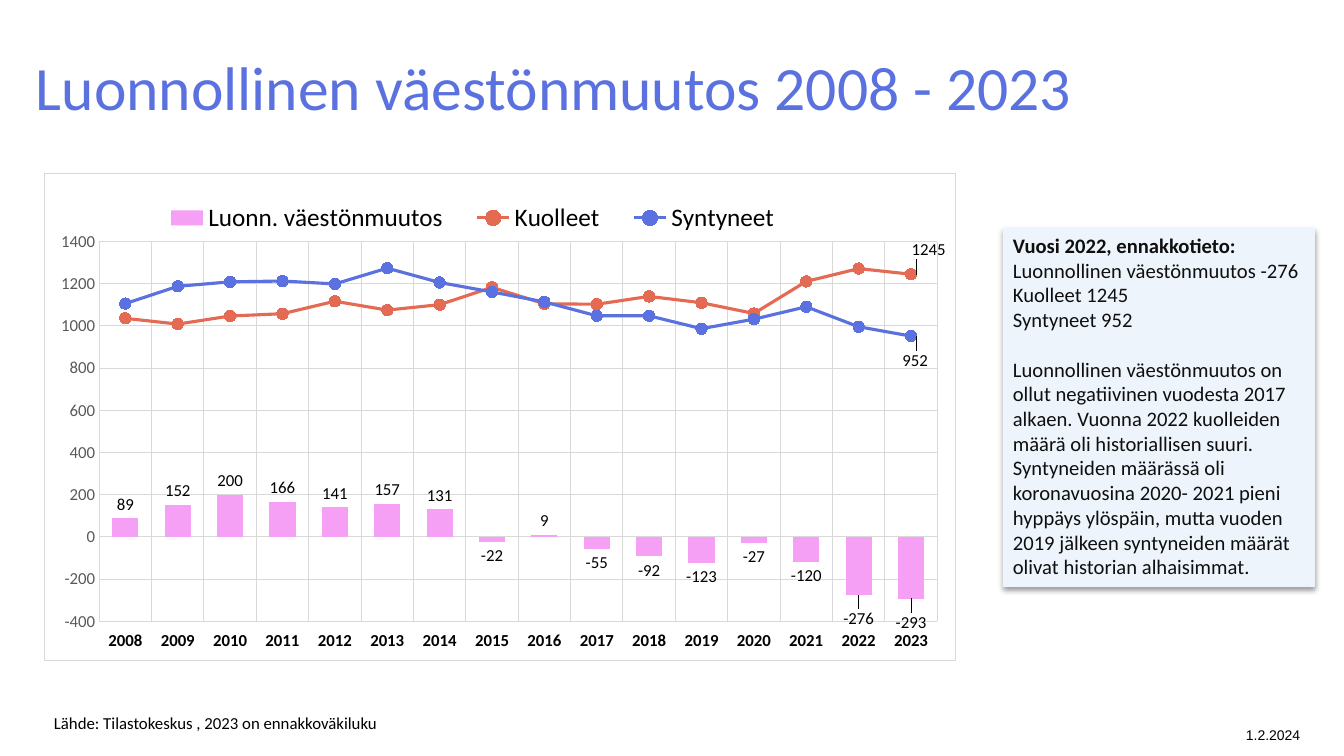
from lxml import etree
from pptx import Presentation
from pptx import util as u
from pptx.chart.data import CategoryChartData
from pptx.dml.color import RGBColor
from pptx.enum import chart as ch, shapes, text
from pptx.oxml import parse_xml
from pptx.oxml.ns import nsdecls, qn

PX = 914400 / 100.8
BLUE, CORAL, PINK, GRID, BLACK = "5A71DF", "E56A54", "F59FF5", "D9D9D9", "000000"

YEARS = [str(year) for year in range(2008, 2024)]
CHANGE = [89, 152, 200, 166, 141, 157, 131, -22, 9, -55, -92, -123, -27, -120, -276, -293]
DEATHS = [1036, 1009, 1047, 1058, 1117, 1075, 1101, 1183,
          1105, 1103, 1140, 1110, 1059, 1211, 1272, 1245]
BIRTHS = [1106, 1188, 1209, 1213, 1199, 1274, 1206, 1161,
          1114, 1048, 1048, 987, 1032, 1091, 996, 952]


def px(length):
    return u.Emu(round(length * PX))


def color(value):
    return RGBColor.from_string(value)


def set_font(font, size, value=BLACK, name="Calibri", bold=False):
    font.size, font.name, font.bold = u.Pt(size), name, bold
    font.color.rgb = color(value)


def set_line(line, value, width=0.75):
    line.color.rgb = color(value)
    line.width = u.Pt(width)


def add_text(frame, content, space_before=0, spacing=None, **style):
    """Fill the first empty paragraph, or append one; newlines become line breaks."""
    paragraph = frame.paragraphs[0]
    if paragraph.runs:
        paragraph = frame.add_paragraph()
    paragraph.alignment = text.PP_ALIGN.LEFT
    if space_before:
        paragraph.space_before = u.Pt(space_before)
    if spacing:
        paragraph.line_spacing = spacing
    for index, line in enumerate(content.split("\n")):
        if index:
            paragraph.add_line_break()
        run = paragraph.add_run()
        run.text = line
        set_font(run.font, **style)


def manual_layout(x, y, w=None, h=None, inner=False, offset=False):
    """Chart layout in fractions of the chart; an offset moves a label from its usual place."""
    parts = []
    if inner:
        parts.append('<c:layoutTarget val="inner"/>')
    if not offset:
        parts.append('<c:xMode val="edge"/><c:yMode val="edge"/>')
    for tag, value in zip("xywh", (x, y, w, h)):
        if value is not None:
            parts.append(f'<c:{tag} val="{value}"/>')
    return parse_xml(f'<c:layout {nsdecls("c")}><c:manualLayout>{"".join(parts)}'
                     '</c:manualLayout></c:layout>')


def move_to_lines(chart, first):
    """Turn the column series from index first on into lines on the same axes."""
    columns = chart.plots[0]
    bars = columns.series[0]._element.getparent()
    lines = parse_xml(f'<c:lineChart {nsdecls("c")}><c:grouping val="standard"/>'
                      '<c:varyColors val="0"/><c:marker val="1"/></c:lineChart>')
    marker = lines.find(qn("c:marker"))
    for series in bars.findall(qn("c:ser"))[first:]:
        for flag in series.findall(qn("c:invertIfNegative")):
            series.remove(flag)
        marker.addprevious(series)
    for axis in bars.findall(qn("c:axId")):
        etree.SubElement(lines, qn("c:axId")).set("val", axis.get("val"))
    bars.addnext(lines)


def shift_label(series, index, x, y, position):
    label = series.points[index].data_label
    set_font(label.font, 12)
    label.position = position
    for element in series._element.findall(f'{qn("c:dLbls")}/{qn("c:dLbl")}'):
        if element.find(qn("c:idx")).get("val") == str(index):
            element.find(qn("c:idx")).addnext(manual_layout(x, y, offset=True))


class Page:
    def __init__(self, deck):
        self.slide = deck.slides.add_slide(deck.slide_layouts[6])

    def label(self, content, x, y, w, h, wrap=True, anchor=text.MSO_ANCHOR.TOP, **style):
        frame = self.slide.shapes.add_textbox(px(x), px(y), px(w), px(h)).text_frame
        frame.word_wrap = wrap
        frame.vertical_anchor = anchor
        add_text(frame, content, **style)

    def panel(self, x, y, w, h, fill):
        """Add a filled box with a soft shadow below it and return its text frame."""
        box = self.slide.shapes.add_shape(
            shapes.MSO_SHAPE.RECTANGLE, px(x), px(y), px(w), px(h))
        box.fill.solid()
        box.fill.fore_color.rgb = color(fill)
        box.line.fill.background()
        box.shadow.inherit = False
        box._element.spPr.find(qn("a:effectLst")).append(parse_xml(
            f'<a:outerShdw {nsdecls("a")} blurRad="50800" dist="25400" dir="5400000">'
            '<a:srgbClr val="000000"><a:alpha val="40000"/></a:srgbClr></a:outerShdw>'))
        box.text_frame.word_wrap = True
        box.text_frame.vertical_anchor = text.MSO_ANCHOR.TOP
        return box.text_frame

    def population_chart(self, x, y, w, h):
        data = CategoryChartData()
        data.categories = YEARS
        for name, values in (("Luonn. väestönmuutos", CHANGE),
                             ("Kuolleet", DEATHS), ("Syntyneet", BIRTHS)):
            data.add_series(name, values)
        chart = self.slide.shapes.add_chart(
            ch.XL_CHART_TYPE.COLUMN_CLUSTERED, px(x), px(y), px(w), px(h), data).chart
        chart.has_title = False
        set_font(chart.font, 18)
        self.axes(chart)
        self.frame(chart)
        move_to_lines(chart, 1)

        columns, lines = chart.plots
        columns.gap_width = 101
        columns.vary_by_categories = False
        change = columns.series[0]
        change.format.fill.solid()
        change.format.fill.fore_color.rgb = color(PINK)
        change.invert_if_negative = False
        outside = ch.XL_LABEL_POSITION.OUTSIDE_END
        change.data_labels.show_value = True
        change.data_labels.position = outside
        set_font(change.data_labels.font, 12)
        for index in (14, 15):
            shift_label(change, index, 0, 0.02, outside)

        for series, tone, dx, dy in zip(lines.series, (CORAL, BLUE),
                                        (-0.01, -0.02), (-0.05, 0.05)):
            series.smooth = False
            set_line(series.format.line, tone, 2.25)
            series.marker.style = ch.XL_MARKER_STYLE.CIRCLE
            series.marker.size = 8
            series.marker.format.fill.solid()
            series.marker.format.fill.fore_color.rgb = color(tone)
            set_line(series.marker.format.line, tone)
            series.data_labels.show_value = False
            shift_label(series, 15, dx, dy, ch.XL_LABEL_POSITION.RIGHT)

    def axes(self, chart):
        years, counts = chart.category_axis, chart.value_axis
        for axis in (years, counts):
            axis.major_tick_mark = axis.minor_tick_mark = ch.XL_TICK_MARK.NONE
            axis.has_major_gridlines = True
            set_line(axis.major_gridlines.format.line, GRID)
        years.tick_label_position = ch.XL_TICK_LABEL_POSITION.LOW
        set_font(years.tick_labels.font, 12, bold=True)
        set_line(years.format.line, GRID)
        counts.minimum_scale, counts.maximum_scale, counts.major_unit = -400, 1400, 200
        set_font(counts.tick_labels.font, 12, "595959")
        counts.format.line.fill.background()

    def frame(self, chart):
        """Place legend and plot area, and draw the chart's border."""
        chart.has_legend = True
        chart.legend.position = ch.XL_LEGEND_POSITION.TOP
        chart.legend.include_in_layout = False
        set_font(chart.legend.font, 18)
        root = chart._chartSpace
        for tag, layout in (("c:plotArea", manual_layout(0.06, 0.14, 0.92, 0.78, inner=True)),
                            ("c:legend", manual_layout(0.11, 0.06, 0.72, 0.06))):
            parent = next(root.iter(qn(tag)))
            for old in parent.findall(qn("c:layout")):
                parent.remove(old)
            if tag == "c:legend":
                parent.find(qn("c:legendPos")).addnext(layout)
            else:
                parent.insert(0, layout)
        root.find(qn("c:chart")).addnext(parse_xml(
            f'<c:spPr {nsdecls("c", "a")}><a:solidFill><a:srgbClr val="FFFFFF"/></a:solidFill>'
            f'<a:ln w="9525"><a:solidFill><a:srgbClr val="{GRID}"/></a:solidFill></a:ln></c:spPr>'))


def main():
    deck = Presentation()
    deck.slide_width, deck.slide_height = px(1344), px(756)
    page = Page(deck)
    page.label("Luonnollinen väestönmuutos 2008 - 2023", 26, 48, 1085, 84,
               anchor=text.MSO_ANCHOR.MIDDLE, size=44, value=BLUE, spacing=0.9)
    summary = page.panel(1003, 228, 312, 359, "EDF4FB")
    note = dict(size=14.7, value="0F0F0F")
    add_text(summary, "Vuosi 2022, ennakkotieto:", bold=True, **note)
    add_text(summary, "Luonnollinen väestönmuutos -276\nKuolleet 1245\nSyntyneet 952", **note)
    add_text(summary, "Luonnollinen väestönmuutos on ollut negatiivinen vuodesta 2017 alkaen. "
             "Vuonna 2022 kuolleiden määrä oli historiallisen suuri. Syntyneiden määrässä oli "
             "koronavuosina 2020- 2021 pieni hyppäys ylöspäin, mutta vuoden 2019 jälkeen "
             "syntyneiden määrät olivat historian alhaisimmat.", space_before=17.6, **note)
    page.label("Lähde: Tilastokeskus , 2023 on ennakkoväkiluku", 44, 708, 525, 38,
               wrap=False, size=12)
    page.label("1.2.2024", 1236, 722, 108, 27, size=10, name="Arial")
    page.population_chart(44, 173, 912, 488)
    deck.save("out.pptx")


if __name__ == "__main__":
    main()
